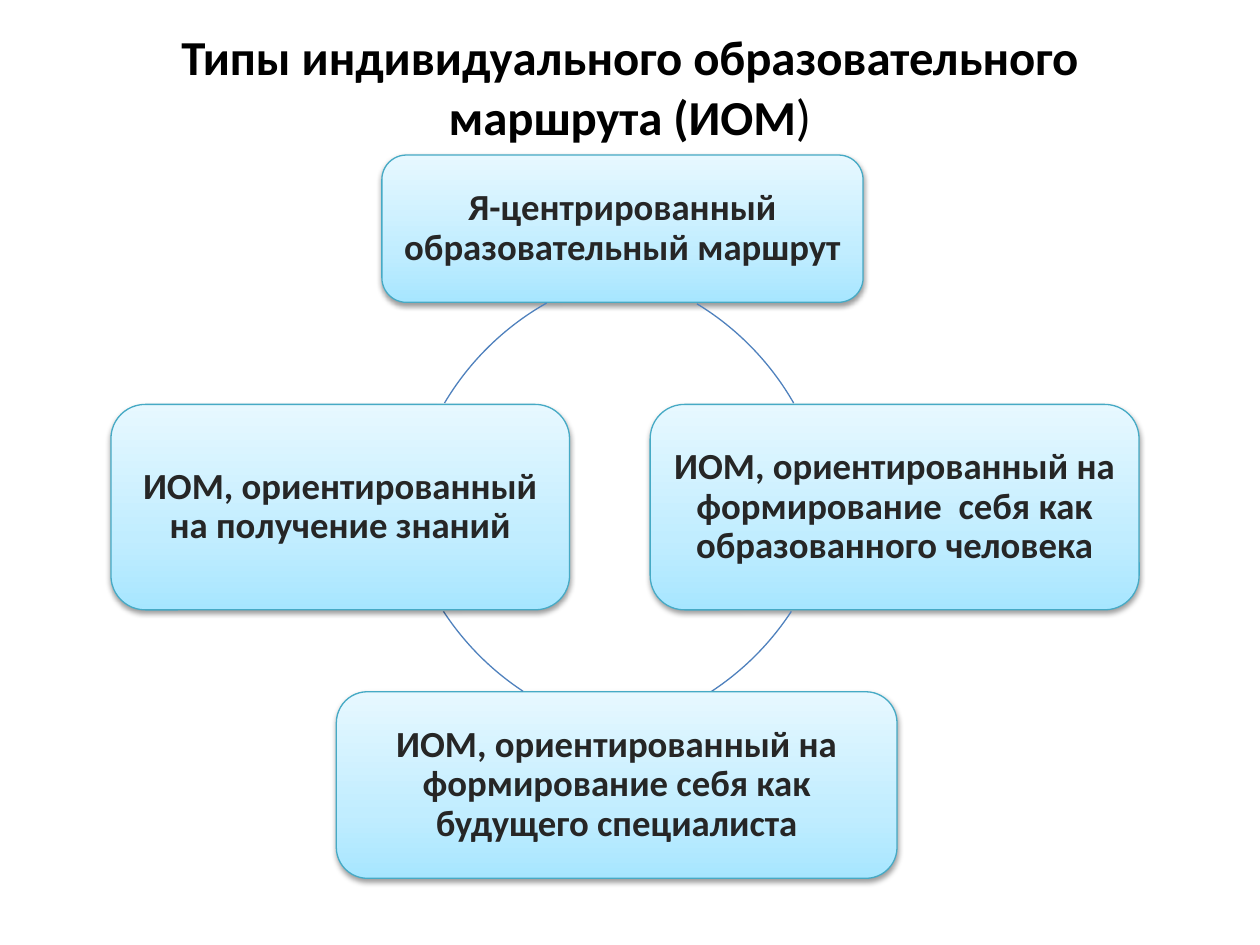
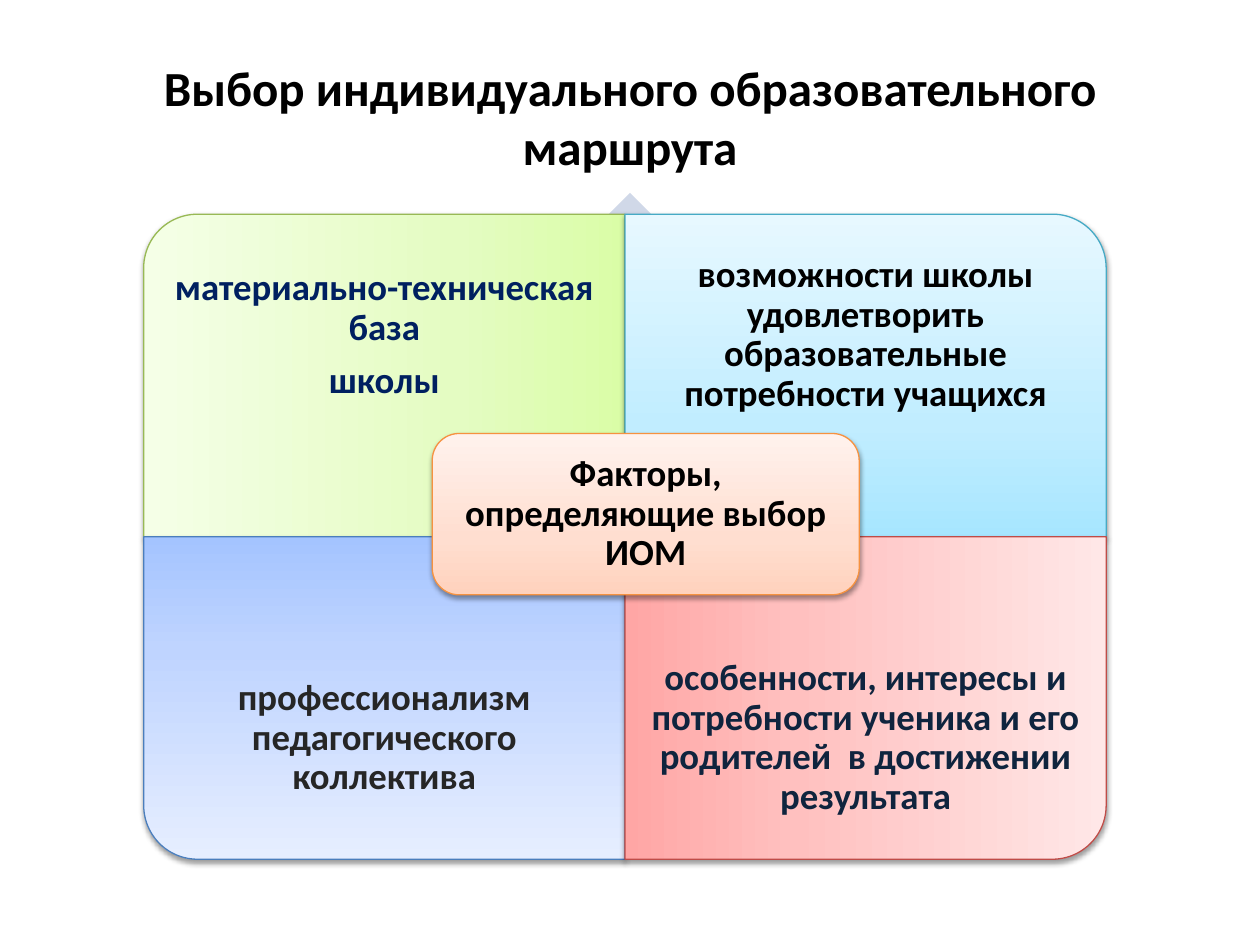
from dataclasses import dataclass

from lxml import etree
from pptx import Presentation
from pptx.dml.color import RGBColor
from pptx.enum import shapes, text
from pptx.oxml import ns
from pptx.util import Pt

FONT = "Calibri"
BODY_SIZE = 21
LINE_WIDTH = 0.75
CARD_INSET = 6.3
QUADRANT_INSET = 11.76

COLORS = {
    "black": "000000",
    "dark": "262626",
    "navy": "002060",
    "ink": "0F243E",
    "arc": "4F81BD",
    "diamond": "D0D8E8",
}


@dataclass(frozen=True)
class Theme:
    """Gradient stops at 0, 35 and 100 percent, and the outline colour."""
    stops: tuple[str, str, str]
    line: str


THEMES = {
    "aqua": Theme(("A7E6FF", "C1EDFF", "E7F8FF"), "46AAC5"),
    "green": Theme(("DAFDA7", "E4FCC2", "F5FFE7"), "98B955"),
    "blue": Theme(("A4C4FF", "BFD4FF", "E6EEFF"), "4B7EBC"),
    "red": Theme(("FFA6A5", "FFC0BF", "FFE7E7"), "BF4C48"),
    "orange": Theme(("FFD2BD", "FFDED0", "FFF2ED"), "F69240"),
}


@dataclass(frozen=True)
class Box:
    left: float
    top: float
    width: float
    height: float

    def points(self) -> tuple[Pt, Pt, Pt, Pt]:
        return Pt(self.left), Pt(self.top), Pt(self.width), Pt(self.height)

    def turned(self) -> "Box":
        """Swap width and height around the same centre."""
        shift = (self.width - self.height) / 2
        return Box(self.left + shift, self.top - shift, self.height, self.width)


@dataclass(frozen=True)
class Card:
    box: Box
    label: str
    theme: str = "aqua"
    color: str = "dark"


@dataclass(frozen=True)
class Arc:
    left: float
    top: float
    start: float
    end: float


@dataclass(frozen=True)
class Quadrant:
    column: int
    row: int
    rotation: int
    theme: str
    color: str
    paragraphs: tuple[str, ...]


TITLE_BOX = Box(36, 21.6, 648, 90)
RAISED_TITLE_BOX = Box(36, 4.2, 648, 90)

ROUTE_CARDS = [
    Card(Box(218.2, 88.6, 275, 84.2), "Я-центрированный образовательный маршрут"),
    Card(Box(371.5, 231.1, 279.4, 117.4),
         "ИОМ, ориентированный на формирование  себя как образованного человека"),
    Card(Box(192.2, 395.3, 320.4, 106.6),
         "ИОМ, ориентированный на формирование себя как будущего специалиста"),
    Card(Box(63.4, 231.1, 262.1, 117.4), "ИОМ, ориентированный на получение знаний"),
]
ARC_DIAMETER = 317.5
ROUTE_ARCS = [
    Arc(157, 150.5, 301.3, 330.2),
    Arc(160.6, 103.7, 33.2, 56.8),
    Arc(227.5, 103.7, 123.4, 146.8),
    Arc(231.8, 152.6, 210.7, 240.5),
]

GRID = Box(82.1, 122.4, 550, 368.6)
QUADRANT_TEXT_SHARE = 0.75
DIAMOND_BOX = Box(200.2, 110.2, 319.7, 319.7)
QUADRANTS = [
    Quadrant(0, 0, 270, "green", "navy", ("материально-техническая база", "школы")),
    Quadrant(1, 0, 0, "aqua", "black",
             ("возможности школы удовлетворить образовательные потребности учащихся",)),
    Quadrant(0, 1, 180, "blue", "dark", ("профессионализм педагогического коллектива",)),
    Quadrant(1, 1, 90, "red", "ink",
             ("особенности, интересы и потребности ученика и его "
              "родителей  в достижении результата",)),
]
FACTORS_CARD = Card(Box(247, 247.7, 244, 92.2), "Факторы, определяющие выбор ИОМ",
                    "orange", "black")


def add_xml(parent, tag: str, **attributes: str):
    return etree.SubElement(parent, ns.qn(tag), attributes)


def style_run(r, size: float, color: str, bold: bool = True) -> None:
    r.font.name = FONT
    r.font.size = Pt(size)
    r.font.bold = bold
    r.font.color.rgb = RGBColor.from_string(COLORS[color])


def prepare_frame(tf, inset_x: float, inset_y: float) -> None:
    tf.word_wrap = True
    tf.vertical_anchor = text.MSO_ANCHOR.MIDDLE
    tf.margin_left = tf.margin_right = Pt(inset_x)
    tf.margin_top = tf.margin_bottom = Pt(inset_y)


def write_body(tf, paragraphs: tuple[str, ...], color: str, inset: float) -> None:
    prepare_frame(tf, inset, inset)
    tf.text = "\n".join(paragraphs)
    for p in tf.paragraphs:
        p.alignment = text.PP_ALIGN.CENTER
        p.line_spacing = 0.9
        style_run(p.runs[0], BODY_SIZE, color)
    for p in tf.paragraphs[:-1]:
        p.space_after = Pt(0.35 * BODY_SIZE)


def add_title(s, box: Box, title: str, size: float):
    tf = s.shapes.add_textbox(*box.points()).text_frame
    prepare_frame(tf, 7.2, 3.6)
    p = tf.paragraphs[0]
    p.text = title
    p.alignment = text.PP_ALIGN.CENTER
    style_run(p.runs[0], size, "black")
    return p


def add_plain_shape(s, kind: shapes.MSO_SHAPE, box: Box):
    sp = s.shapes.add_shape(kind, *box.points())
    sp.shadow.inherit = False
    return sp


def add_gradient_shape(s, kind: shapes.MSO_SHAPE, box: Box, theme: Theme):
    """Shape with a three-stop gradient, thin outline and soft shadow below."""
    sp = add_plain_shape(s, kind, box)
    sp.line.color.rgb = RGBColor.from_string(theme.line)
    sp.line.width = Pt(LINE_WIDTH)
    props = sp.element.spPr

    gradient = etree.Element(ns.qn("a:gradFill"), rotWithShape="1")
    stops = add_xml(gradient, "a:gsLst")
    for percent, color in zip((0, 35, 100), theme.stops):
        stop = add_xml(stops, "a:gs", pos=str(percent * 1000))
        add_xml(stop, "a:srgbClr", val=color)
    add_xml(gradient, "a:lin", ang=str(270 * 60000), scaled="1")
    props.find(ns.qn("a:ln")).addprevious(gradient)

    shadow = add_xml(props.find(ns.qn("a:effectLst")), "a:outerShdw",
                     blurRad=str(Pt(3.1)), dist=str(Pt(1.6)),
                     dir=str(90 * 60000), rotWithShape="0")
    shade = add_xml(shadow, "a:srgbClr", val=COLORS["black"])
    add_xml(shade, "a:alpha", val="38000")
    return sp


def add_card(s, card: Card) -> None:
    sp = add_gradient_shape(s, shapes.MSO_SHAPE.ROUNDED_RECTANGLE, card.box,
                            THEMES[card.theme])
    write_body(sp.text_frame, (card.label,), card.color, CARD_INSET)


def add_arc(s, arc: Arc) -> None:
    box = Box(arc.left, arc.top, ARC_DIAMETER, ARC_DIAMETER)
    sp = add_plain_shape(s, shapes.MSO_SHAPE.ARC, box)
    # Adjustments are in units of 100000; angles in 60000ths of a degree.
    sp.adjustments[0] = arc.start * 0.6
    sp.adjustments[1] = arc.end * 0.6
    sp.fill.background()
    sp.line.color.rgb = RGBColor.from_string(COLORS["arc"])
    sp.line.width = Pt(LINE_WIDTH)


def add_quadrant(s, quadrant: Quadrant) -> None:
    """Quarter with its rounded corner outward and its text in the outer part."""
    width, height = GRID.width / 2, GRID.height / 2
    box = Box(GRID.left + quadrant.column * width, GRID.top + quadrant.row * height,
              width, height)
    sideways = quadrant.rotation % 180 == 90
    sp = add_gradient_shape(s, shapes.MSO_SHAPE.ROUND_1_RECTANGLE,
                            box.turned() if sideways else box, THEMES[quadrant.theme])
    sp.rotation = quadrant.rotation

    text_height = height * QUADRANT_TEXT_SHARE
    text_top = box.top + quadrant.row * (height - text_height)
    label = s.shapes.add_textbox(*Box(box.left, text_top, width, text_height).points())
    write_body(label.text_frame, quadrant.paragraphs, quadrant.color, QUADRANT_INSET)


def build_route_types(s) -> None:
    p = add_title(s, RAISED_TITLE_BOX,
                  "Типы индивидуального образовательного маршрута (ИОМ", 27.9)
    r = p.add_run()
    r.text = ")"
    style_run(r, 28.8, "black", bold=False)
    for card, arc in zip(ROUTE_CARDS, ROUTE_ARCS):
        add_card(s, card)
        add_arc(s, arc)


def build_route_choice(s) -> None:
    add_title(s, TITLE_BOX, "Выбор индивидуального образовательного маршрута", 28)
    diamond = add_plain_shape(s, shapes.MSO_SHAPE.DIAMOND, DIAMOND_BOX)
    diamond.fill.solid()
    diamond.fill.fore_color.rgb = RGBColor.from_string(COLORS["diamond"])
    diamond.line.fill.background()
    for quadrant in QUADRANTS:
        add_quadrant(s, quadrant)
    add_card(s, FACTORS_CARD)


def main() -> None:
    prs = Presentation()
    prs.slide_width, prs.slide_height = Pt(720), Pt(540)
    blank = prs.slide_layouts[6]
    for build in (build_route_types, build_route_choice):
        build(prs.slides.add_slide(blank))
    prs.save("out.pptx")


if __name__ == "__main__":
    main()
